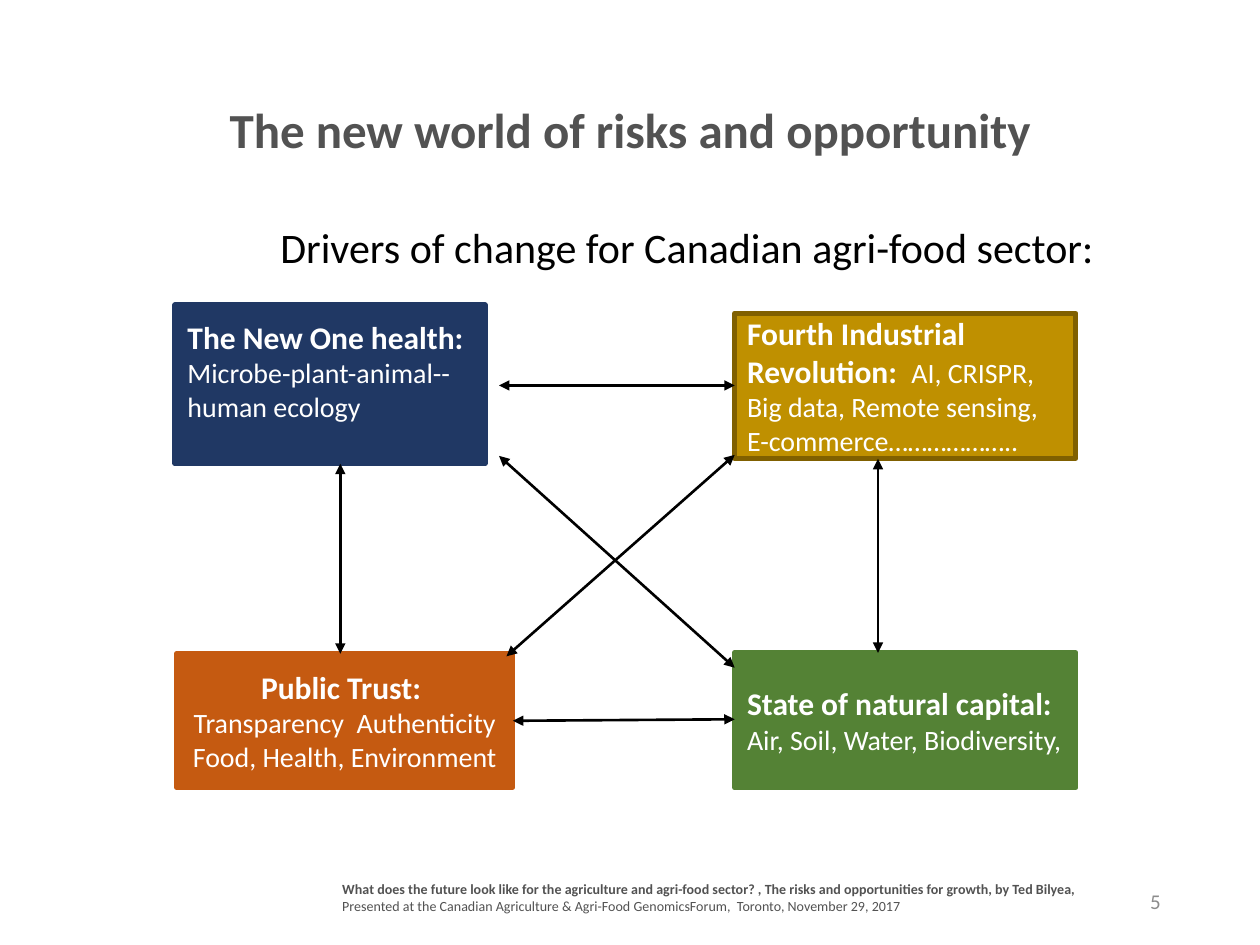
from pptx import Presentation
from pptx.dml.color import RGBColor as Rgb
from pptx.enum.shapes import MSO_CONNECTOR as Link, MSO_SHAPE as Shape
from pptx.enum.text import MSO_ANCHOR as Anchor, PP_ALIGN as Align
from pptx.oxml.ns import qn
from pptx.util import Cm, Pt
from lxml.etree import SubElement as Sub

THEME = {
    "font": "Calibri", "title": 28, "lead": 24, "head": 18, "body": 16,
    "page": 12, "note": 8, "edge": 3, "line": 1.5,
    "dark": "525252", "black": "000000", "white": "FFFFFF", "grey": "8C8C8C",
    "navy": "203864", "gold": "BF9000", "brown": "806000",
    "rust": "C55A11", "green": "548235",
}

# Lengths are in centimetres: left, top, width, height
TITLE = ("The new world of risks and opportunity", (1.27, 1.4, 22.86, 2.54))
LEAD = ("Drivers of change for Canadian agri-food sector:",
        (0.84, 3.12, 23.7, 13.51))
PAGE = ("5", (17.93, 17.65, 5.72, 1.02))
NOTE = (("What does the future look like for the agriculture and agri-food "
         "sector? , The risks and opportunities for growth, by Ted Bilyea, ",
         "Presented at the Canadian Agriculture & Agri-Food GenomicsForum,  "
         "Toronto, November 29, 2017"), (6.65, 17.63, 15.82, 0.94))

# Each paragraph is a list of (text, style) runs
DRIVERS = [
    {"area": (14.81, 6.32, 6.88, 2.92), "fill": "gold", "edge": "brown",
     "paras": [[("Fourth Industrial Revolution:  ", "head"),
                ("AI, CRISPR,", "body")],
               [("Big data, Remote sensing, E-commerce………………..", "body")]]},
    {"area": (3.53, 6.15, 6.25, 3.2), "fill": "navy", "foot": 0.7,
     "paras": [[("The New One health:", "head")],
               [("Microbe-plant-animal--human ecology", "body")]]},
    {"area": (3.56, 13.18, 6.78, 2.69), "fill": "rust", "align": Align.CENTER,
     "paras": [[("Public Trust: ", "head")],
               [("Transparency  Authenticity Food, Health, Environment",
                 "body")]]},
    {"area": (14.81, 13.16, 6.88, 2.72), "fill": "green",
     "paras": [[("State of natural capital:", "head")],
               [("Air, Soil, Water, Biodiversity,", "body")]]},
]

ARROWS = [
    (17.7, 9.25, 17.7, 13.16), (6.86, 9.35, 6.86, 13.18),
    (10.06, 7.77, 14.81, 7.77), (10.34, 14.53, 14.81, 14.5),
    (10.21, 13.23, 14.81, 9.17), (10.06, 9.19, 14.81, 13.46),
]


def color(name):
    return Rgb.from_string(THEME[name])


def style(run, size, ink, bold=False):
    font = run.font
    font.name, font.size, font.bold = THEME["font"], Pt(THEME[size]), bold
    font.color.rgb = color(ink)


def add_text(slide, text, area, size, ink, align, anchor=Anchor.MIDDLE,
             bold=False, space=1.0):
    frame = slide.shapes.add_textbox(*map(Cm, area)).text_frame
    frame.word_wrap, frame.vertical_anchor = True, anchor
    para = frame.paragraphs[0]
    para.text, para.alignment, para.line_spacing = text, align, space
    style(para.runs[0], size, ink, bold)
    return frame


def add_driver(slide, item):
    box = slide.shapes.add_shape(Shape.RECTANGLE, *map(Cm, item["area"]))
    box.shadow.inherit = False
    box.fill.solid()
    box.fill.fore_color.rgb = color(item["fill"])
    box.line.color.rgb = color(item.get("edge", item["fill"]))
    box.line.width = Pt(THEME["edge"])
    frame = box.text_frame
    frame.word_wrap, frame.vertical_anchor = True, Anchor.MIDDLE
    frame.margin_bottom = Cm(item.get("foot", 0.13))
    for i, parts in enumerate(item["paras"]):
        para = frame.add_paragraph() if i else frame.paragraphs[0]
        para.alignment = item.get("align", Align.LEFT)
        for text, size in parts:
            run = para.add_run()
            run.text = text
            style(run, size, "white", size == "head")


def add_arrow(slide, ends):
    """Draw a line with a triangle at both ends."""
    arrow = slide.shapes.add_connector(Link.STRAIGHT, *map(Cm, ends))
    arrow.line.color.rgb = color("black")
    arrow.line.width = Pt(THEME["line"])
    props = arrow.line._get_or_add_ln()
    for tag in ("a:headEnd", "a:tailEnd"):
        Sub(props, qn(tag), type="triangle")
    Sub(arrow._element.spPr, qn("a:effectLst"))


def main():
    deck = Presentation()
    deck.slide_width, deck.slide_height = Cm(25.4), Cm(19.05)
    slide = deck.slides.add_slide(deck.slide_layouts[6])

    add_text(slide, *TITLE, "title", "dark", Align.CENTER, bold=True, space=0.9)
    lead = add_text(slide, *LEAD, "lead", "black", Align.CENTER, Anchor.TOP,
                    space=0.9)
    lead.margin_left, lead.margin_top = Cm(2.57), Cm(1.47)

    for item in DRIVERS:
        add_driver(slide, item)
    for ends in ARROWS:
        add_arrow(slide, ends)

    add_text(slide, *PAGE, "page", "grey", Align.RIGHT)
    (work, event), area = NOTE
    note = add_text(slide, work, area, "note", "dark", Align.LEFT, Anchor.TOP,
                    bold=True)
    run = note.paragraphs[0].add_run()
    run.text = event
    style(run, "note", "dark")

    deck.save("out.pptx")


if __name__ == "__main__":
    main()
